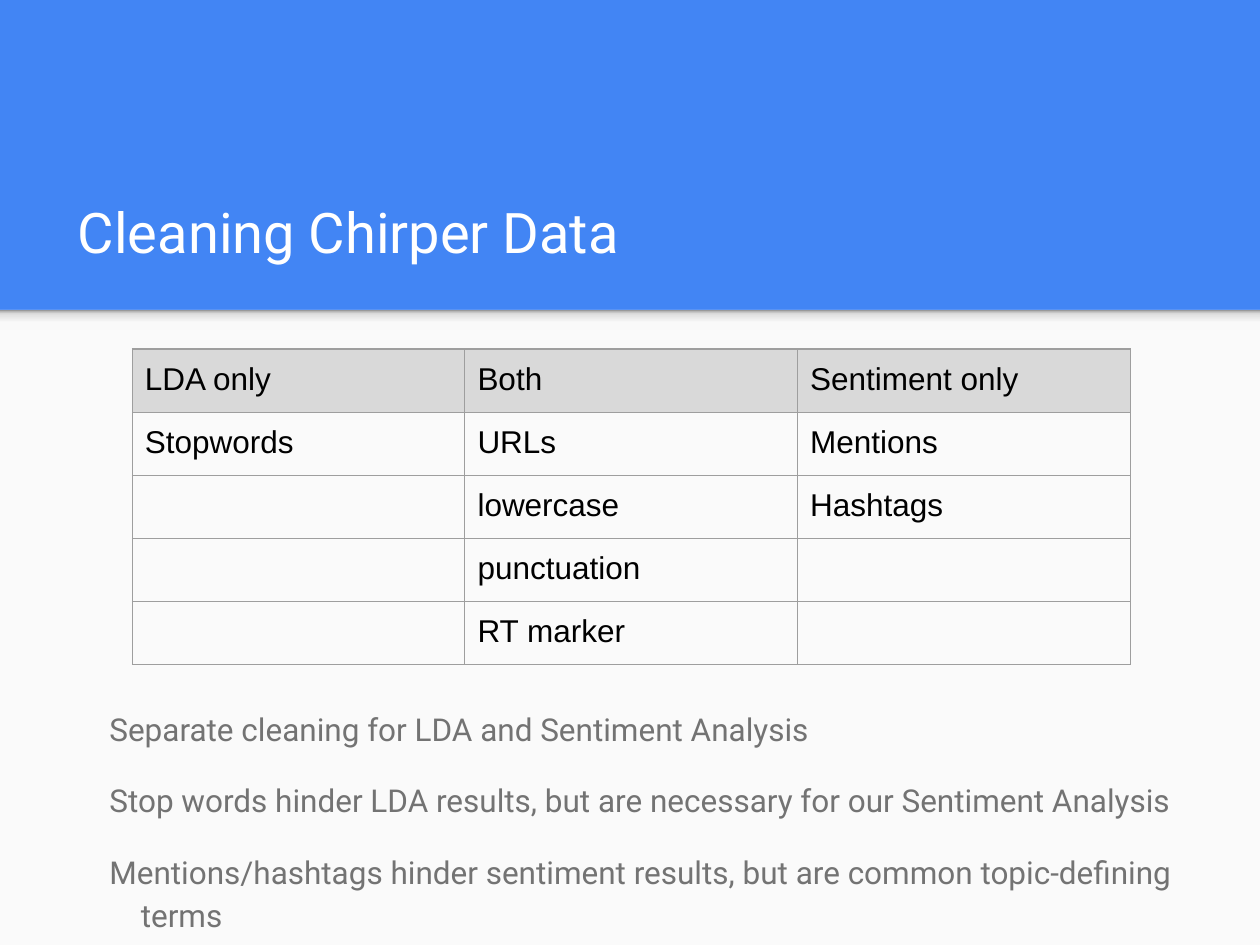
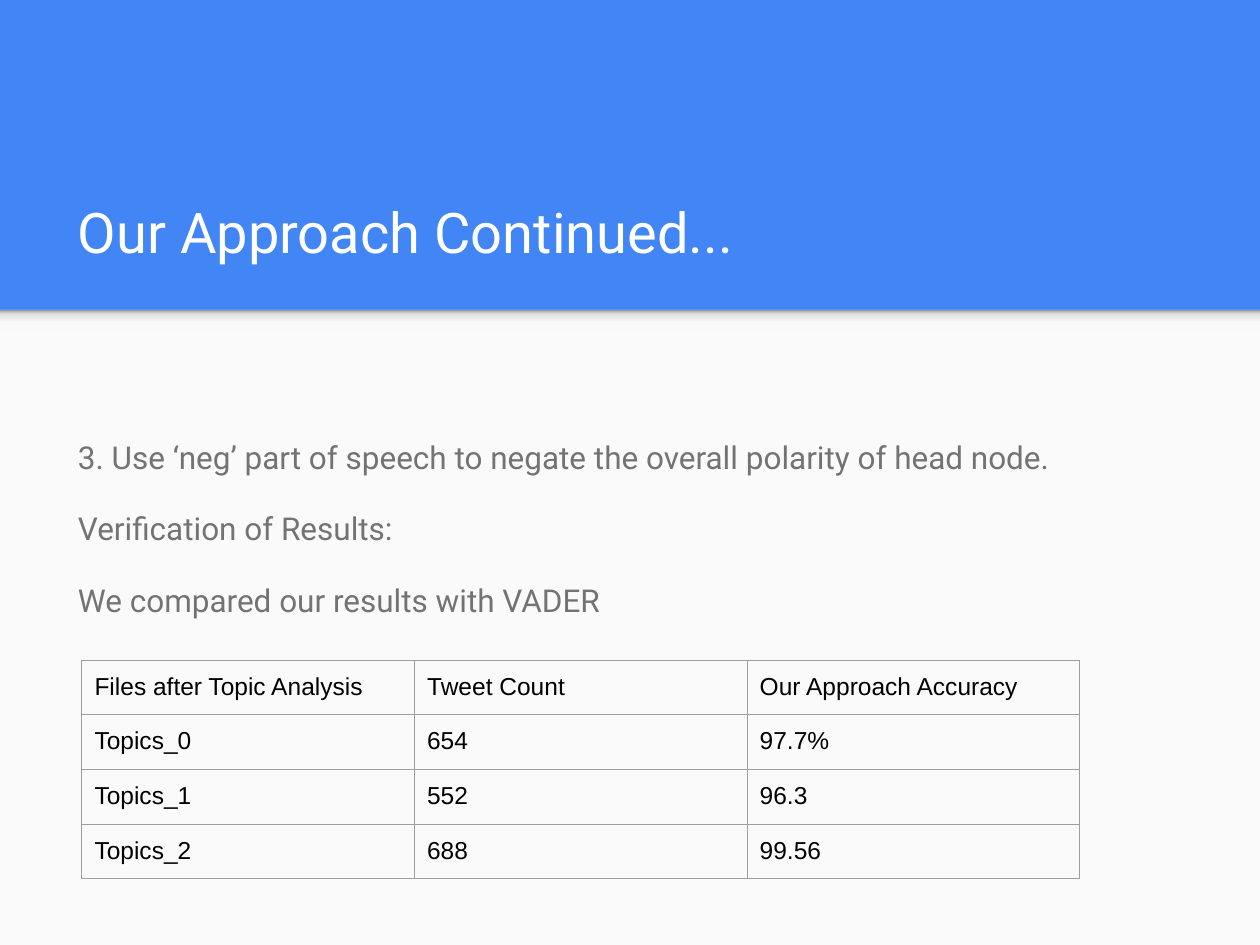
from lxml.etree import SubElement
from pptx import Presentation
from pptx.dml.color import RGBColor
from pptx.enum.shapes import MSO_SHAPE
from pptx.enum.text import MSO_ANCHOR
from pptx.oxml.ns import qn
from pptx.util import Inches, Pt

BLUE, PAPER, GRAY, WHITE, BLACK = "4285F4", "FAFAFA", "737373", "FFFFFF", "000000"
BORDER, HEADER = "9E9E9E", "D9D9D9"
BAND_SHADOW = [(0, "F9F9F9"), (36, "F9F9F9"), (80, "DEDEDE"), (100, "999999")]
HEADING_FONT, TABLE_FONT = "Roboto", "Arial"
SLIDE_WIDTH, SLIDE_HEIGHT, BAND_HEIGHT = 10, 7.5, 2.46
LEFT, INSET = 0.52, 0.1


def color(hex_value):
    return RGBColor.from_string(hex_value)


def write(frame, lines, font=HEADING_FONT, size=18, fill=GRAY,
          line_spacing=None, space_after=0, hanging=0):
    """Fill a text frame, one paragraph a line; hanging is the depth of wrapped lines in inches."""
    frame.word_wrap = True
    for index, line in enumerate(lines):
        paragraph = frame.paragraphs[0] if index == 0 else frame.add_paragraph()
        paragraph.line_spacing = line_spacing
        paragraph.space_after = Pt(space_after)
        if hanging:
            properties = paragraph._p.get_or_add_pPr()
            properties.set("marL", str(Inches(2 * hanging)))
            properties.set("indent", str(-Inches(hanging)))
        run = paragraph.add_run()
        run.text = line
        run.font.name = font
        run.font.size = Pt(size)
        run.font.color.rgb = color(fill)


def set_insets(target):
    target.margin_left = target.margin_right = Inches(INSET)
    target.margin_top = target.margin_bottom = Inches(INSET)


def add_borders(cell):
    properties = cell._tc.get_or_add_tcPr()
    for side in ("lnL", "lnR", "lnT", "lnB"):
        line = SubElement(properties, qn(f"a:{side}"), w=str(Pt(0.75)))
        fill = SubElement(line, qn("a:solidFill"))
        SubElement(fill, qn("a:srgbClr"), val=BORDER)


class Deck:
    def __init__(self):
        self.presentation = Presentation()
        self.presentation.slide_width = Inches(SLIDE_WIDTH)
        self.presentation.slide_height = Inches(SLIDE_HEIGHT)
        self.slide = None

    def add_slide(self, title):
        self.slide = self.presentation.slides.add_slide(self.presentation.slide_layouts[6])
        background = self.slide.background.fill
        background.solid()
        background.fore_color.rgb = color(BLUE)
        paper = self.rectangle(BAND_HEIGHT, SLIDE_HEIGHT - BAND_HEIGHT)
        paper.fill.solid()
        paper.fill.fore_color.rgb = color(PAPER)
        self.band_shadow()
        self.text([title], LEFT, 1.08, 8.99, 1.12, anchor=MSO_ANCHOR.BOTTOM,
                  size=32, fill=WHITE)

    def rectangle(self, top, height):
        """Add a plain rectangle as wide as the slide."""
        shape = self.slide.shapes.add_shape(
            MSO_SHAPE.RECTANGLE, 0, Inches(top), Inches(SLIDE_WIDTH), Inches(height))
        shape.shadow.inherit = False
        shape.line.fill.background()
        return shape

    def band_shadow(self):
        shape = self.rectangle(BAND_HEIGHT, 0.16)
        shape.fill.gradient()
        shape.fill.gradient_angle = 90
        stops = shape._element.spPr.find(qn("a:gradFill")).find(qn("a:gsLst"))
        for stop in list(stops):
            stops.remove(stop)
        for percent, hex_value in BAND_SHADOW:
            stop = SubElement(stops, qn("a:gs"), pos=str(percent * 1000))
            SubElement(stop, qn("a:srgbClr"), val=hex_value)

    def text(self, lines, left, top, width, height, anchor=MSO_ANCHOR.TOP, **style):
        box = self.slide.shapes.add_textbox(
            Inches(left), Inches(top), Inches(width), Inches(height))
        frame = box.text_frame
        frame.vertical_anchor = anchor
        set_insets(frame)
        write(frame, lines, **style)

    def body(self, lines, top, width, height, hanging=0):
        self.text(lines, LEFT, top, width, height,
                  line_spacing=1.15, space_after=16, hanging=hanging)

    def table(self, rows, left, top, row_height, size, header_fill=None):
        column_width = 2.64
        columns = len(rows[0])
        table = self.slide.shapes.add_table(
            len(rows), columns, Inches(left), Inches(top),
            Inches(column_width * columns), Inches(row_height * len(rows))).table
        table.first_row = table.horz_banding = False
        for row_index, row in enumerate(rows):
            for column_index, value in enumerate(row):
                cell = table.cell(row_index, column_index)
                set_insets(cell)
                add_borders(cell)
                if header_fill and row_index == 0:
                    cell.fill.solid()
                    cell.fill.fore_color.rgb = color(header_fill)
                else:
                    cell.fill.background()
                if value:
                    write(cell.text_frame, [value], font=TABLE_FONT, size=size, fill=BLACK)


def main():
    deck = Deck()

    deck.add_slide("Cleaning Chirper Data")
    deck.body([
        "Separate cleaning for LDA and Sentiment Analysis",
        "Stop words hinder LDA results, but are necessary for our Sentiment Analysis",
        "Mentions/hashtags hinder sentiment results, but are common topic-defining terms",
    ], 5.49, 9.17, 1.73, hanging=0.25)
    deck.table([
        ("LDA only", "Both", "Sentiment only"),
        ("Stopwords", "URLs", "Mentions"),
        ("", "lowercase", "Hashtags"),
        ("", "punctuation", ""),
        ("", "RT marker", ""),
    ], 1.05, 2.77, 0.48, 18, header_fill=HEADER)

    deck.add_slide("Our Approach Continued...")
    deck.body([
        "3. Use ‘neg’ part of speech to negate the overall polarity of head node.",
        "Verification of Results:",
        "We compared our results with VADER",
    ], 3.33, 8.99, 3.42)
    deck.table([
        ("Files after Topic Analysis", "Tweet Count", "Our Approach Accuracy"),
        ("Topics_0", "654", "97.7%"),
        ("Topics_1", "552", "96.3"),
        ("Topics_2", "688", "99.56"),
    ], 0.65, 5.24, 0.42, 14)

    deck.presentation.save("out.pptx")


if __name__ == "__main__":
    main()
